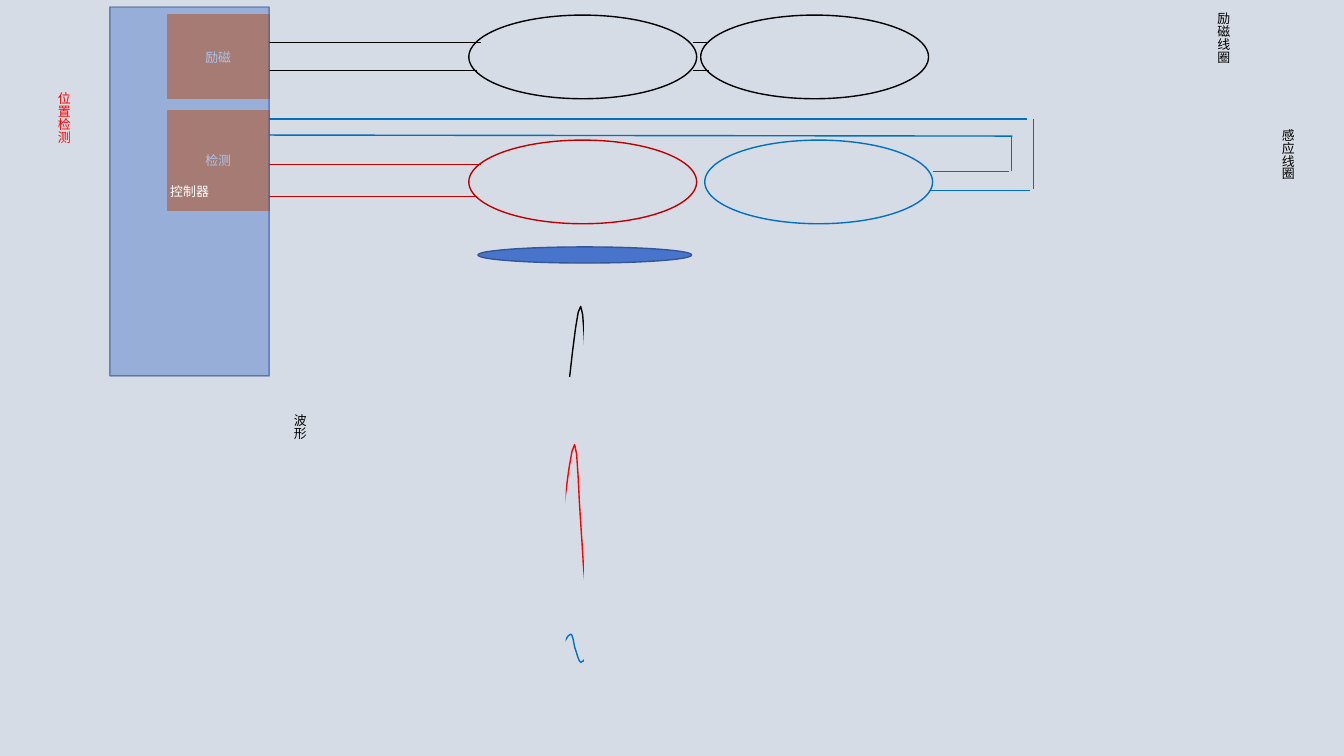
from dataclasses import dataclass
from typing import Optional

from lxml import etree
from pptx import Presentation
from pptx.dml.color import RGBColor
from pptx.enum.shapes import MSO_CONNECTOR, MSO_SHAPE
from pptx.enum.text import MSO_ANCHOR, MSO_AUTO_SIZE, PP_ALIGN
from pptx.oxml.ns import qn
from pptx.util import Inches, Pt

RECT, OVAL = MSO_SHAPE.RECTANGLE, MSO_SHAPE.OVAL
STRAIGHT = MSO_CONNECTOR.STRAIGHT
CENTER, MIDDLE = PP_ALIGN.CENTER, MSO_ANCHOR.MIDDLE
FIT = MSO_AUTO_SIZE.SHAPE_TO_FIT_TEXT

BG, BLACK, WHITE, RED = "D6DCE5", "000000", "FFFFFF", "FF0000"
DARK_RED, BLUE, ORANGE = "C00000", "0070C0", "EE822F"
FILL_BLUE, EDGE_BLUE = "4874CB", "355696"

# Grid of square cells, 90 rows to the slide's height
ROWS = 90
prs = Presentation()
prs.slide_width, prs.slide_height = Inches(13.33), Inches(7.5)
CELL = prs.slide_height / ROWS
s = prs.slides.add_slide(prs.slide_layouts[6])


@dataclass
class Box:
    col: float
    row: float
    cols: float
    rows: float
    kind: int = RECT
    fill: Optional[str] = None
    line: Optional[str] = None
    text: str = ""
    fill_alpha: int = 100
    line_alpha: int = 100


@dataclass
class Wire:
    col1: float
    row1: float
    col2: float
    row2: float
    color: str


@dataclass
class Label:
    col: float
    row: float
    rows: float
    text: str
    color: str = BLACK


@dataclass
class Wave:
    color: str
    points: list  # start point, then three points for each Bezier arc


def grid(*cells: float) -> list:
    return [round(c * CELL) for c in cells]


def rgb(color: str) -> RGBColor:
    return RGBColor.from_string(color)


def set_alpha(fill_parent, percent: int) -> None:
    clr = fill_parent.find(qn("a:solidFill")).find(qn("a:srgbClr"))
    etree.SubElement(clr, qn("a:alpha")).set("val", str(percent * 1000))


def write(tf, text: str, *, color: str, size: float = 9.2, font: str = "Calibri", align=None) -> None:
    p = tf.paragraphs[0]
    if align is not None:
        p.alignment = align
    r = p.add_run()
    r.text = text
    r.font.name, r.font.size = font, Pt(size)
    r.font.color.rgb = rgb(color)


def style(sp, fill: Optional[str], line: Optional[str]) -> None:
    sp.shadow.inherit = False
    if fill:
        sp.fill.solid()
        sp.fill.fore_color.rgb = rgb(fill)
    else:
        sp.fill.background()
    if line:
        sp.line.color.rgb = rgb(line)
        sp.line.width = Pt(1)
    else:
        sp.line.fill.background()


def draw_box(b: Box) -> None:
    sp = s.shapes.add_shape(b.kind, *grid(b.col, b.row, b.cols, b.rows))
    style(sp, b.fill, b.line)
    if b.fill_alpha < 100:
        set_alpha(sp._element.spPr, b.fill_alpha)
    if b.line_alpha < 100:
        set_alpha(sp._element.spPr.find(qn("a:ln")), b.line_alpha)
    if b.text:
        sp.text_frame.vertical_anchor = MIDDLE
        write(sp.text_frame, b.text, color=WHITE, align=CENTER)


def draw_wire(w: Wire) -> None:
    c = s.shapes.add_connector(STRAIGHT, *grid(w.col1, w.row1, w.col2, w.row2))
    c.line.color.rgb = rgb(w.color)
    c.line.width = Pt(1)
    etree.SubElement(c._element.spPr, qn("a:effectLst"))


def draw_label(lb: Label) -> None:
    sp = s.shapes.add_textbox(*grid(lb.col, lb.row, 4.32, lb.rows))
    tf = sp.text_frame
    tf.word_wrap = True
    tf.auto_size = FIT
    tf._txBody.bodyPr.set("vert", "eaVert")
    write(tf, lb.text, color=lb.color)


def bezier(a: tuple, b: tuple, c: tuple, d: tuple, steps: int = 4) -> list:
    ts = [i / steps for i in range(1, steps + 1)]
    return [
        grid(*((1 - t) ** 3 * p0 + 3 * t * (1 - t) ** 2 * p1 + 3 * t * t * (1 - t) * p2 + t ** 3 * p3
               for p0, p1, p2, p3 in zip(a, b, c, d)))
        for t in ts
    ]


def draw_wave(w: Wave) -> None:
    fb = s.shapes.build_freeform(*grid(*w.points[0]), scale=1.0)
    for i in range(0, len(w.points) - 1, 3):
        fb.add_line_segments(bezier(*w.points[i:i + 4]), close=False)
    style(fb.convert_to_shape(), None, w.color)


EDGE = 32.04  # right side of the controller
COIL = (27.12, 9.96)

boxes = [
    # Coils
    Box(83.4, 1.8, *COIL, OVAL, line=BLACK),
    Box(55.8, 1.8, *COIL, OVAL, line=BLACK),
    Box(55.8, 16.68, *COIL, OVAL, line=DARK_RED),
    Box(83.88, 16.68, *COIL, OVAL, line=BLUE),
    # Moving target
    Box(56.88, 29.4, 25.44, 1.92, OVAL, FILL_BLUE, EDGE_BLUE),
    # Controller modules
    Box(19.92, 1.8, 12.12, 9.96, fill=ORANGE, line=ORANGE, text="励磁"),
    Box(19.92, 13.2, 12.12, 11.88, fill=ORANGE, line=ORANGE, text="检测"),
]
wires = [
    # Excitation, between the coils
    *[Wire(82.44, y, 84.36, y, BLACK) for y in (5.04, 8.4)],
    # Pairs of leads from the controller to the left coils
    *[Wire(EDGE, y, x, y, color)
      for color, rows in ((BLACK, (5.04, 8.4)), (DARK_RED, (19.56, 23.4)))
      for x, y in zip((57.24, 56.76), rows)],
    # Loop around the right sensing coil
    Wire(111, 20.4, 120.12, 20.4, BLUE),
    Wire(110.52, 22.68, 122.64, 22.68, BLUE),
    Wire(120.36, 16.2, 120.36, 20.4, BLUE),
    Wire(123, 14.16, 123, 22.56, BLUE),
    Wire(EDGE, 14.16, 122.28, 14.16, BLUE),
    Wire(EDGE, 16.08, 120.48, 16.2, BLUE),
]
waves = [
    Wave(BLACK, [(67.8, 44.88), (68.28, 40.68), (68.76, 36.36), (69.12, 36.48), (69.48, 36.48),
                 (69.6, 42.36), (69.84, 45), (70.08, 47.64), (70.2, 52.2), (70.44, 52.08),
                 (70.68, 52.08), (71.4, 44.64), (71.4, 44.64)]),
    Wave(RED, [(66.96, 62.04), (67.44, 57.48), (68.04, 52.92), (68.4, 52.92), (68.76, 53.04),
               (68.88, 59.4), (69.12, 62.28), (69.36, 65.04), (69.48, 70.08), (69.84, 69.96),
               (70.08, 69.84), (70.92, 61.8), (70.92, 61.8)]),
    Wave(BLUE, [(70.44, 77.04), (69.96, 78), (69.48, 78.84), (69.12, 78.84), (68.88, 78.84),
                (68.64, 77.64), (68.4, 77.04), (68.28, 76.44), (68.16, 75.48), (67.92, 75.48),
                (67.56, 75.48), (66.84, 77.16), (66.84, 77.16)]),
]
# Panels that leave a narrow window onto the waves
panels = [
    Box(14.04, 35.04, 53.28, 52.08, fill=BG),
    Box(69.6, 35.64, 44.64, 52.08, fill=BG, line=BG),
]
labels = [
    Label(142.8, 0.24, 15.84, "励磁线圈"),
    Label(150.48, 14.16, 15.84, "感应线圈"),
    Label(4.8, 9.84, 24, "位置检测", RED),
    Label(32.88, 48.12, 12.12, "波形"),
]
controller = Box(13.08, 0.84, 18.96, 43.92, RECT, FILL_BLUE, EDGE_BLUE, "控制器", 44, 63)

# Draw from back to front
s.background.fill.solid()
s.background.fill.fore_color.rgb = rgb(BG)
for draw, items in ((draw_box, boxes), (draw_wire, wires), (draw_wave, waves),
                    (draw_box, panels), (draw_label, labels), (draw_box, [controller])):
    for item in items:
        draw(item)

prs.save("out.pptx")
